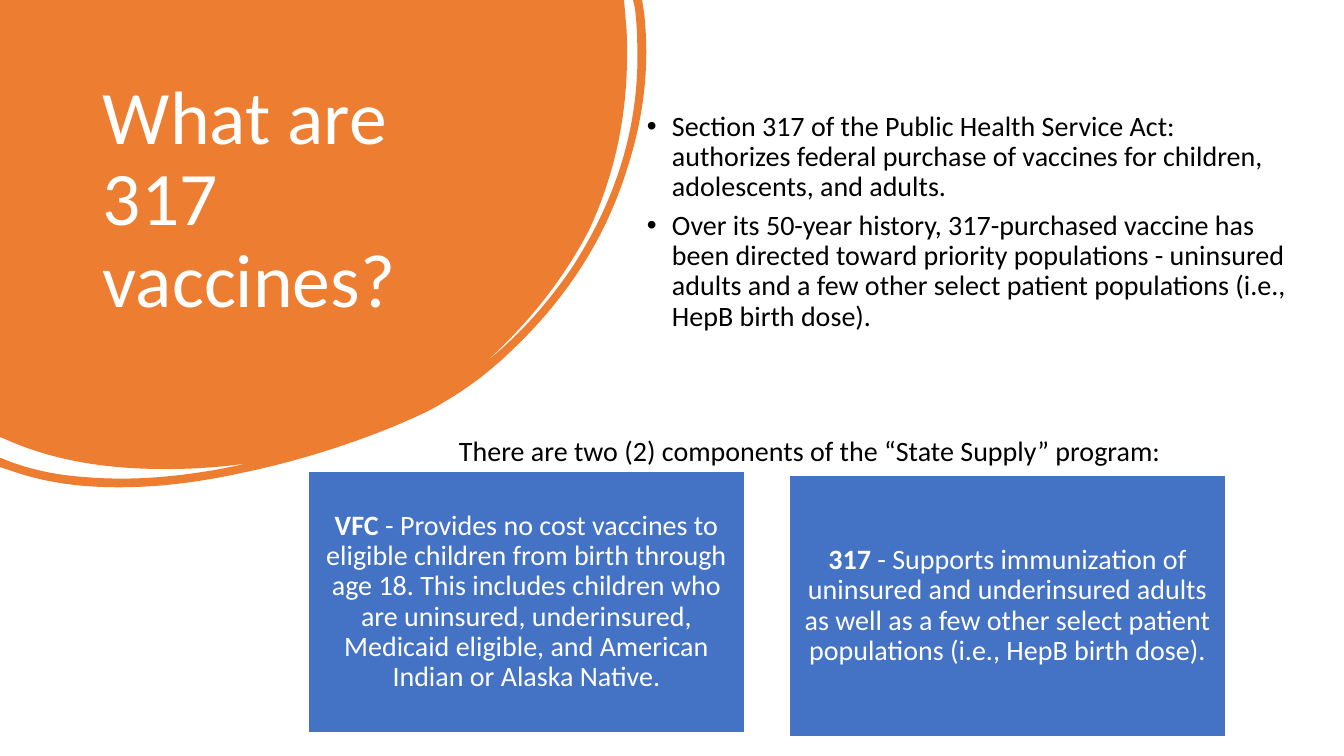
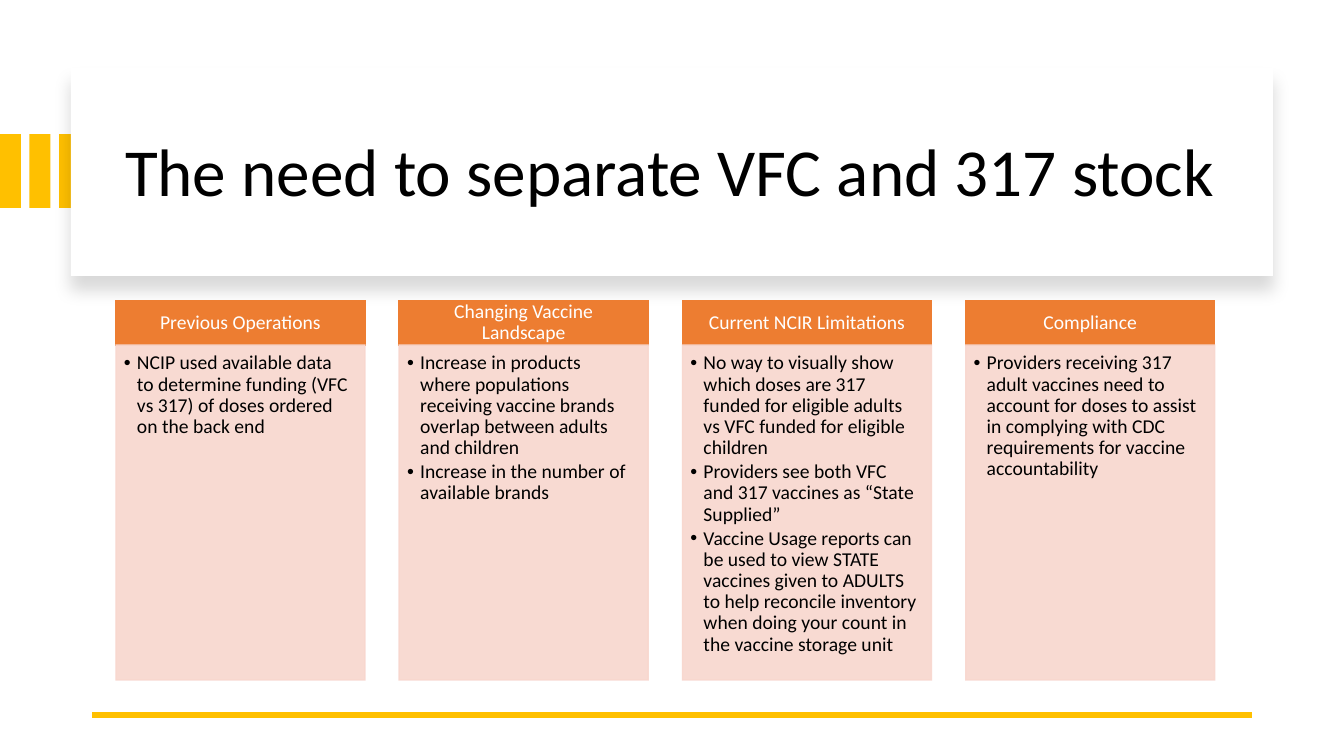
import math

import pptx
import pptx.dml.color
import pptx.enum.shapes
import pptx.enum.text
import pptx.oxml
import pptx.oxml.ns
import pptx.util

EMU_PER_PX = 914400 / 100.8
SLIDE_SIZE = (1344, 756)
FONT = "Calibri"
ORANGE, BLUE, GOLD = "ED7D31", "4472C4", "FFC000"
PINK, WHITE, BLACK = "F8D7CE", "FFFFFF", "000000"
MIDDLE = pptx.enum.text.MSO_ANCHOR.MIDDLE
TOP = pptx.enum.text.MSO_ANCHOR.TOP
CENTER = pptx.enum.text.PP_ALIGN.CENTER
LEFT = pptx.enum.text.PP_ALIGN.LEFT

# Slide 1
VACCINES_TITLE = "What are 317 vaccines?"
VACCINES_POINTS = [
    "Section 317 of the Public Health Service Act: authorizes federal purchase of vaccines "
    "for children, adolescents, and adults.",
    "Over its 50-year history, 317-purchased vaccine has been directed toward priority "
    "populations - uninsured adults and a few other select patient populations (i.e., HepB "
    "birth dose).",
]
COMPONENTS_INTRO = "There are two (2) components of the “State Supply” program:"
COMPONENTS = [
    ((308, 471), "VFC",
     " - Provides no cost vaccines to eligible children from birth through age 18. This "
     "includes children who are uninsured, underinsured, Medicaid eligible, and American "
     "Indian or Alaska Native."),
    ((789, 475), "317",
     " - Supports immunization of uninsured and underinsured adults as well as a few other "
     "select patient populations (i.e., HepB birth dose)."),
]
COMPONENT_SIZE = (437, 262)
BLOB_ROTATION = 148.1
# Two numbers are a straight segment; six are a cubic curve.
BLOB_OUTLINE = [
    (0, 0), (624, 0), (626, 23),
    (627, 33, 627, 44, 627, 54), (627, 116, 615, 174, 589, 230),
    (563, 280, 529, 322, 489, 359), (490, 359, 492, 357, 493, 356),
    (523, 331, 549, 301, 571, 269), (617, 199, 641, 122, 637, 38),
    (637, 28, 636, 18, 635, 8), (633, 0), (642, 0), (644, 12),
    (650, 65, 644, 117, 627, 169), (605, 240, 565, 300, 511, 351),
    (501, 361, 491, 369, 480, 378), (469, 386, 458, 394, 444, 402),
    (430, 411, 413, 418, 397, 425), (346, 446, 294, 462, 241, 473),
    (191, 484, 138, 490, 86, 486), (60, 484, 35, 479, 12, 471),
    (0, 467), (0, 458), (1, 458),
    (27, 469, 55, 475, 85, 477), (130, 481, 175, 477, 220, 469),
    (225, 468, 230, 467, 235, 466), (239, 465, 244, 464, 249, 463),
    (222, 467, 195, 469, 166, 469), (111, 469, 56, 462, 5, 439), (0, 437),
]

# Slide 2
STOCK_TITLE = "The need to separate VFC and 317 stock"
COLUMNS = [
    ("Previous Operations", [
        "NCIP used available data to determine funding (VFC vs 317) of doses ordered on the "
        "back end"]),
    ("Changing Vaccine Landscape", [
        "Increase in products where populations receiving vaccine brands overlap between "
        "adults and children",
        "Increase in the number of available brands"]),
    ("Current NCIR Limitations", [
        "No way to visually show which doses are 317 funded for eligible adults vs VFC funded "
        "for eligible children",
        "Providers see both VFC and 317 vaccines as “State Supplied”",
        "Vaccine Usage reports can be used to view STATE vaccines given to ADULTS to help "
        "reconcile inventory when doing your count in the vaccine storage unit"]),
    ("Compliance", [
        "Providers receiving 317 adult vaccines need to account for doses to assist in "
        "complying with CDC requirements for vaccine accountability"]),
]
COLUMN_LEFT, COLUMN_PITCH, COLUMN_WIDTH = 116, 283.25, 249
HEADER_TOP, HEADER_HEIGHT, BODY_HEIGHT = 301, 44, 335
STRIPE_COUNT, STRIPE_PITCH = 3, 29.5


def px(length):
    return pptx.util.Emu(round(length * EMU_PER_PX))


def rgb(color):
    return pptx.dml.color.RGBColor.from_string(color)


def add_xml(parent, tag, **attributes):
    element = pptx.oxml.parse_xml(f"<a:{tag} {pptx.oxml.ns.nsdecls('a')}/>")
    for name, value in attributes.items():
        element.set(name, str(value))
    parent.append(element)
    return element


def set_alpha(fill_parent, percent):
    color = fill_parent.find(".//" + pptx.oxml.ns.qn("a:srgbClr"))
    add_xml(color, "alpha", val=percent * 1000)


def paint(shape, fill, line=None):
    shape.shadow.inherit = False
    shape.fill.solid()
    shape.fill.fore_color.rgb = rgb(fill)
    if line:
        shape.line.color.rgb = rgb(line)
        shape.line.width = pptx.util.Pt(1)
        add_xml(shape._element.spPr.find(pptx.oxml.ns.qn("a:ln")), "miter", lim=800000)
    else:
        shape.line.fill.background()


def add_rectangle(slide, box, fill, line=None):
    shape = slide.shapes.add_shape(
        pptx.enum.shapes.MSO_SHAPE.RECTANGLE, *(px(value) for value in box))
    paint(shape, fill, line)
    return shape


def write(shape, paragraphs, size, color, align=LEFT, anchor=TOP,
          margins=(10, 5, 10, 5), indent=(0, 0), space_after=0):
    """Fill a shape with paragraphs, each a list of (text, bold) runs."""
    frame = shape.text_frame
    frame.word_wrap = True
    frame.vertical_anchor = anchor
    (frame.margin_left, frame.margin_top,
     frame.margin_right, frame.margin_bottom) = (px(value) for value in margins)
    left, hanging = indent
    for index, runs in enumerate(paragraphs):
        paragraph = frame.add_paragraph() if index else frame.paragraphs[0]
        paragraph.alignment = align
        paragraph.line_spacing = 0.9
        paragraph.space_after = pptx.util.Pt(space_after)
        properties = paragraph._p.get_or_add_pPr()
        properties.set("marL", str(px(left)))
        properties.set("indent", str(px(-hanging)))
        if hanging:
            add_xml(properties, "buFont", typeface="Arial")
            add_xml(properties, "buChar", char="•")
        for text, bold in runs:
            run = paragraph.add_run()
            run.text = text
            run.font.name = FONT
            run.font.size = pptx.util.Pt(size)
            run.font.bold = bold
            run.font.color.rgb = rgb(color)


def plain(*texts):
    return [[(text, False)] for text in texts]


def add_text(slide, box, texts, size, color, **options):
    shape = slide.shapes.add_textbox(*(px(value) for value in box))
    write(shape, plain(*texts), size, color, **options)


def rotate(x, y, degrees):
    cosine, sine = math.cos(math.radians(degrees)), math.sin(math.radians(degrees))
    return x * cosine - y * sine, x * sine + y * cosine


def add_rotated_outline(slide, segments, degrees, fill):
    """Draw slide-space segments as a freeform whose frame is turned by degrees."""
    turned = []
    for segment in segments:
        pairs = zip(segment[::2], segment[1::2])
        turned.append([tuple(px(value) for value in rotate(x, y, -degrees)) for x, y in pairs])
    ends = [points[-1] for points in turned]
    builder = slide.shapes.build_freeform(*ends[0], scale=1.0)
    builder.add_line_segments(ends[1:], close=True)
    shape = builder.convert_to_shape()

    lines = list(shape._element.iter(pptx.oxml.ns.qn("a:lnTo")))
    for line, points in zip(lines, turned[1:]):
        if len(points) == 3:
            curve = add_xml(line.getparent(), "cubicBezTo")
            line.getparent().replace(line, curve)
            for x, y in points:
                add_xml(curve, "pt", x=x - shape.left, y=y - shape.top)

    center_x, center_y = rotate(
        shape.left + shape.width / 2, shape.top + shape.height / 2, degrees)
    shape.left = round(center_x - shape.width / 2)
    shape.top = round(center_y - shape.height / 2)
    shape.rotation = degrees
    paint(shape, fill)


def build_vaccines_slide(slide):
    add_rotated_outline(slide, BLOB_OUTLINE, BLOB_ROTATION, ORANGE)
    add_text(slide, (93, 74, 402, 266), [VACCINES_TITLE], 54, WHITE)
    add_text(slide, (624, 107, 686, 302), VACCINES_POINTS, 20, BLACK,
             indent=(38, 25), space_after=6)
    for position, name, description in COMPONENTS:
        card = add_rectangle(slide, position + COMPONENT_SIZE, BLUE, WHITE)
        write(card, [[(name, True), (description, False)]], 20, WHITE,
              align=CENTER, anchor=MIDDLE, margins=(8, 8, 8, 8))
    add_text(slide, (437, 432, 806, 40), [COMPONENTS_INTRO], 20, BLACK, indent=(12, 0))


def build_stock_slide(slide):
    for index in range(STRIPE_COUNT):
        add_rectangle(slide, (index * STRIPE_PITCH, 134, 21, 74), GOLD)

    title_card = add_rectangle(slide, (71, 68, 1202, 208), WHITE)
    effects = title_card._element.spPr.find(pptx.oxml.ns.qn("a:effectLst"))
    shadow = add_xml(effects, "outerShdw", blurRad=pptx.util.Pt(11), dist=pptx.util.Pt(10),
                     dir=90 * 60000, algn="t", rotWithShape=0)
    add_xml(shadow, "srgbClr", val=BLACK)
    set_alpha(shadow, 15)
    add_text(slide, (115, 89, 1122, 171), [STOCK_TITLE], 48, BLACK, anchor=MIDDLE)

    rule = slide.shapes.add_connector(
        pptx.enum.shapes.MSO_CONNECTOR.STRAIGHT, px(1252), px(715), px(92), px(715))
    rule.line.color.rgb = rgb(GOLD)
    rule.line.width = pptx.util.Pt(4.5)
    add_xml(rule._element.spPr, "effectLst")

    for index, (heading, points) in enumerate(COLUMNS):
        left = COLUMN_LEFT + index * COLUMN_PITCH
        header = add_rectangle(
            slide, (left, HEADER_TOP, COLUMN_WIDTH, HEADER_HEIGHT), ORANGE, ORANGE)
        write(header, plain(heading), 14, WHITE, align=CENTER, anchor=MIDDLE,
              margins=(11, 6, 11, 6))
        body = add_rectangle(
            slide, (left, HEADER_TOP + HEADER_HEIGHT, COLUMN_WIDTH, BODY_HEIGHT), PINK, PINK)
        properties = body._element.spPr
        for tag in ("a:solidFill", "a:ln"):
            set_alpha(properties.find(pptx.oxml.ns.qn(tag)), 90)
        write(body, plain(*points), 14, BLACK, margins=(8, 8, 12, 12),
              indent=(13, 13), space_after=2)


def main():
    presentation = pptx.Presentation()
    presentation.slide_width, presentation.slide_height = (px(value) for value in SLIDE_SIZE)
    for build in (build_vaccines_slide, build_stock_slide):
        build(presentation.slides.add_slide(presentation.slide_layouts[6]))
    presentation.save("out.pptx")


if __name__ == "__main__":
    main()
